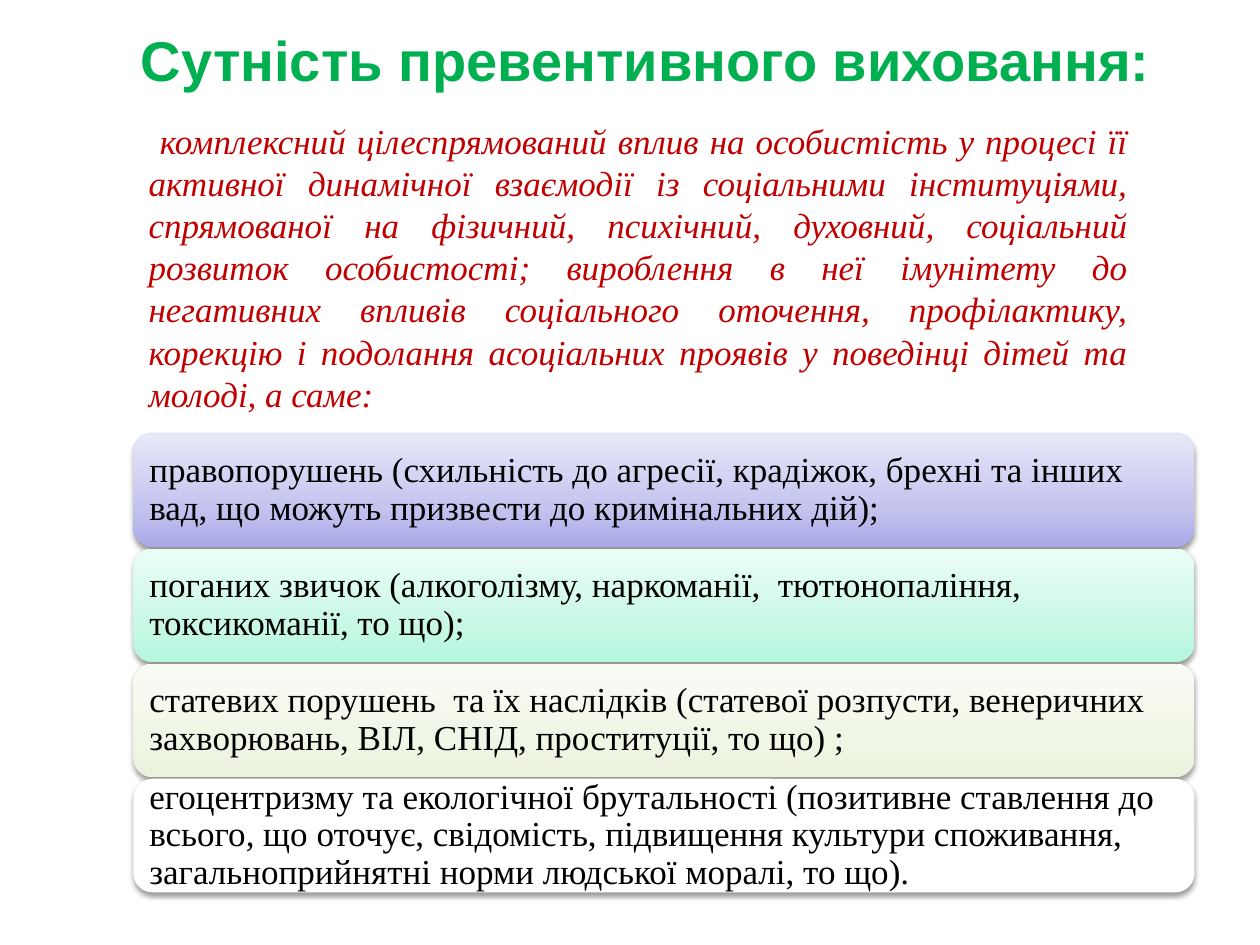
import pptx
import pptx.dml.color
import pptx.enum.shapes
import pptx.enum.text
import pptx.oxml
import pptx.oxml.ns
import pptx.util

Cm = pptx.util.Cm
Pt = pptx.util.Pt
ALIGN = pptx.enum.text.PP_ALIGN
ANCHOR = pptx.enum.text.MSO_ANCHOR
qn = pptx.oxml.ns.qn

HEX = {
    "title": "00B050",
    "lead": "C00000",
    "text": "000000",
    "white": "FFFFFF",
    "violet": ("A9A9E9", "C4C4EF", "E8E8FA"),
    "mint": ("B4F7DD", "CAF8E6", "EAFDF6"),
    "olive": ("EBF2DD", "F0F6E6", "F9FCF5"),
}
STOPS = (0, 35, 100)
SERIF = "Times New Roman"

TITLE = "Сутність превентивного виховання:"
LEAD = (
    "комплексний цілеспрямований вплив на особистість у процесі її активної "
    "динамічної взаємодії із соціальними інституціями, спрямованої на фізичний, "
    "психічний, духовний, соціальний розвиток особистості; вироблення в неї "
    "імунітету до негативних впливів соціального оточення, профілактику, корекцію "
    "і подолання асоціальних проявів у поведінці дітей та молоді, а саме:"
)
CARDS = [
    ("violet", "правопорушень (схильність до агресії, крадіжок, брехні та інших вад, "
               "що можуть призвести до кримінальних дій);"),
    ("mint", "поганих звичок (алкоголізму, наркоманії,  тютюнопаління, "
             "токсикоманії, то що);"),
    ("olive", "статевих порушень  та їх наслідків (статевої розпусти, венеричних "
              "захворювань, ВІЛ, СНІД, проституції, то що) ;"),
    ("white", "егоцентризму та екологічної брутальності (позитивне ставлення до "
              "всього, що оточує, свідомість, підвищення культури споживання, "
              "загальноприйнятні норми людської моралі, то що)."),
]
LEFT, TOP, WIDTH, HEIGHT, STEP = 2.69, 8.74, 21.39, 2.29, 2.32


def parse(xml):
    return pptx.oxml.parse_xml(xml.replace(
        " ", ' xmlns:a="http://schemas.openxmlformats.org/drawingml/2006/main" ', 1))


def place(shape, left, top, width, height):
    shape.left, shape.top = Cm(left), Cm(top)
    shape.width, shape.height = Cm(width), Cm(height)


def write(shape, text, size, face, tint, align, anchor, space=1.0):
    """Fill the shape with one paragraph and return it."""
    frame = shape.text_frame
    frame.word_wrap = True
    frame.auto_size = pptx.enum.text.MSO_AUTO_SIZE.NONE
    frame.vertical_anchor = anchor
    para = frame.paragraphs[0]
    para.alignment = align
    para.line_spacing = space
    para.space_before = Pt(0)
    run = para.add_run()
    run.text = text
    run.font.size = Pt(size)
    run.font.name = face
    run.font.color.rgb = pptx.dml.color.RGBColor.from_string(HEX[tint])
    return para


def add_title(slide):
    shape = slide.shapes.title
    place(shape, 2.49, 0.38, 21.06, 1.63)
    para = write(shape, TITLE, 32, "Arial", "title", ALIGN.CENTER, ANCHOR.TOP)
    para.runs[0].font.bold = True


def add_lead(slide):
    shape = slide.placeholders[1]
    place(shape, 1.98, 2.29, 21.01, 6.25)
    para = write(shape, LEAD, 20, SERIF, "lead", ALIGN.JUSTIFY, ANCHOR.TOP)
    para.runs[0].font.italic = True
    props = para._p.get_or_add_pPr()
    props.set("marL", str(Cm(0.76)))
    props.set("indent", str(Cm(0.23)))
    props.append(parse("<a:buNone />"))


def paint(shape, tint):
    """Give a plain fill, or a three-stop fade from the bottom up."""
    fill, shade = shape.fill, HEX[tint]
    if isinstance(shade, str):
        fill.solid()
        fill.fore_color.rgb = pptx.dml.color.RGBColor.from_string(shade)
        return
    fill.gradient()
    fill.gradient_angle = 90
    stops = shape._element.spPr.find(".//" + qn("a:gsLst"))
    for old in list(stops):
        stops.remove(old)
    for pos, color in zip(STOPS, shade):
        stops.append(parse(
            f'<a:gs pos="{pos * 1000}"><a:srgbClr val="{color}"/></a:gs>'))


def add_shade(shape):
    shape.shadow.inherit = False
    shape._element.spPr.find(qn("a:effectLst")).append(parse(
        f'<a:outerShdw blurRad="{Pt(3.1)}" dist="{Pt(1.6)}" dir="5400000" '
        'rotWithShape="0"><a:srgbClr val="000000"><a:alpha val="38000"/>'
        '</a:srgbClr></a:outerShdw>'))


def add_card(slide, top, tint, text):
    shape = slide.shapes.add_shape(
        pptx.enum.shapes.MSO_SHAPE.ROUNDED_RECTANGLE,
        Cm(LEFT), Cm(top), Cm(WIDTH), Cm(HEIGHT))
    paint(shape, tint)
    shape.line.fill.background()
    add_shade(shape)
    frame = shape.text_frame
    frame.margin_left = frame.margin_right = Cm(0.21)
    frame.margin_top = frame.margin_bottom = Cm(0.21)
    write(shape, text, 20, SERIF, "text", ALIGN.LEFT, ANCHOR.MIDDLE, 0.9)


def main():
    deck = pptx.Presentation()
    deck.slide_width, deck.slide_height = Cm(25.4), Cm(19.05)
    slide = deck.slides.add_slide(deck.slide_layouts[1])
    add_title(slide)
    add_lead(slide)
    for row, (tint, text) in enumerate(CARDS):
        add_card(slide, TOP + row * STEP, tint, text)
    deck.save("out.pptx")


if __name__ == "__main__":
    main()
